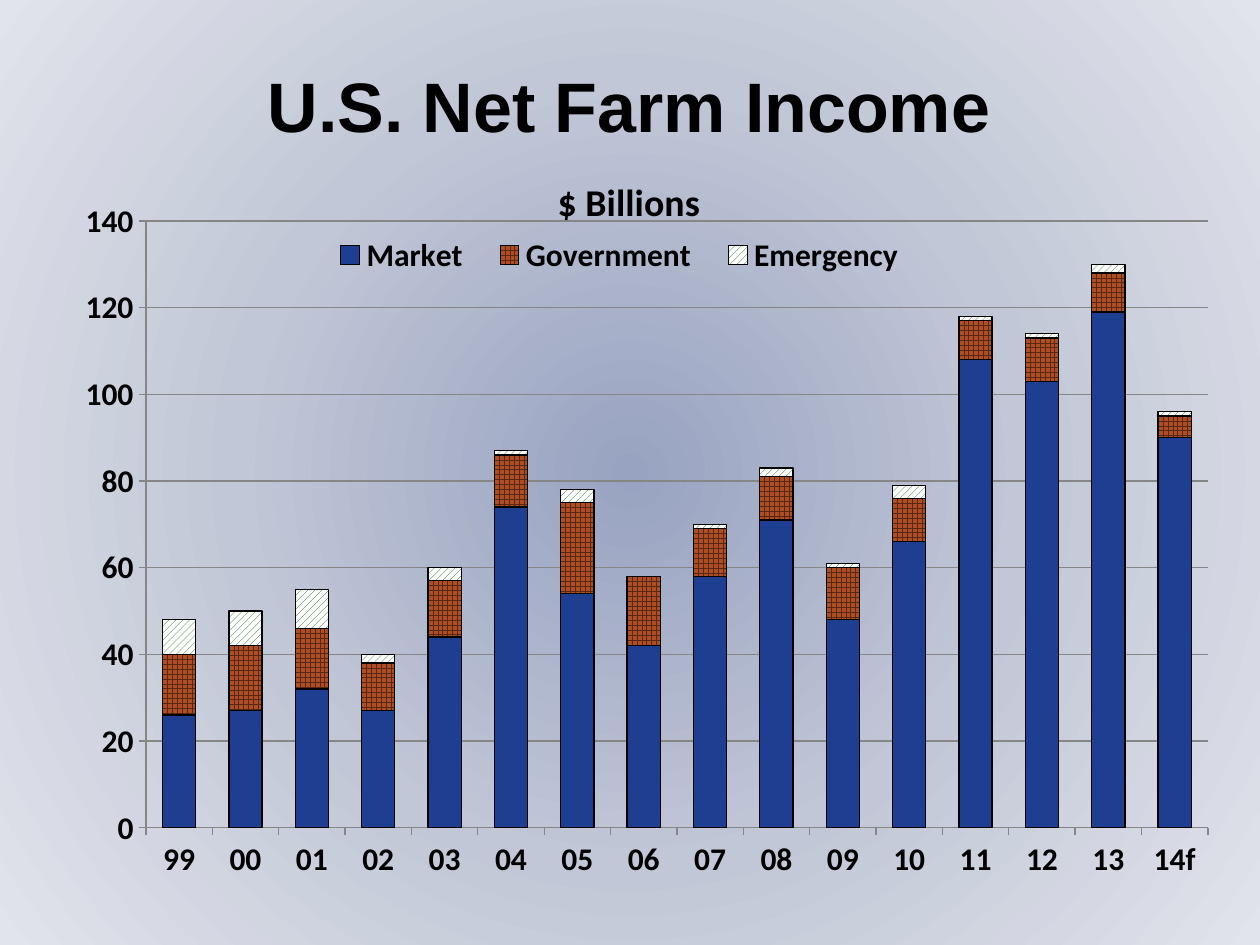
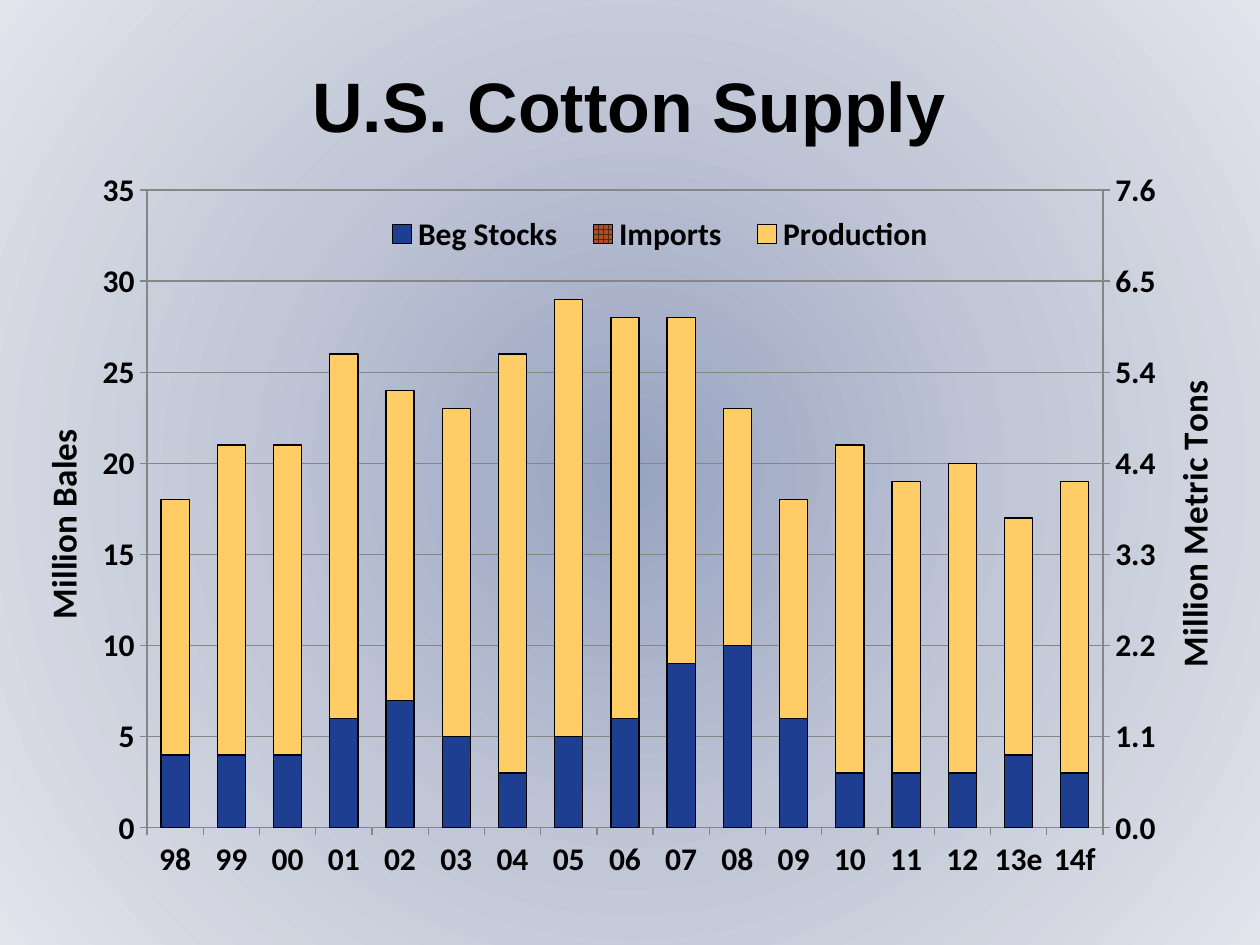
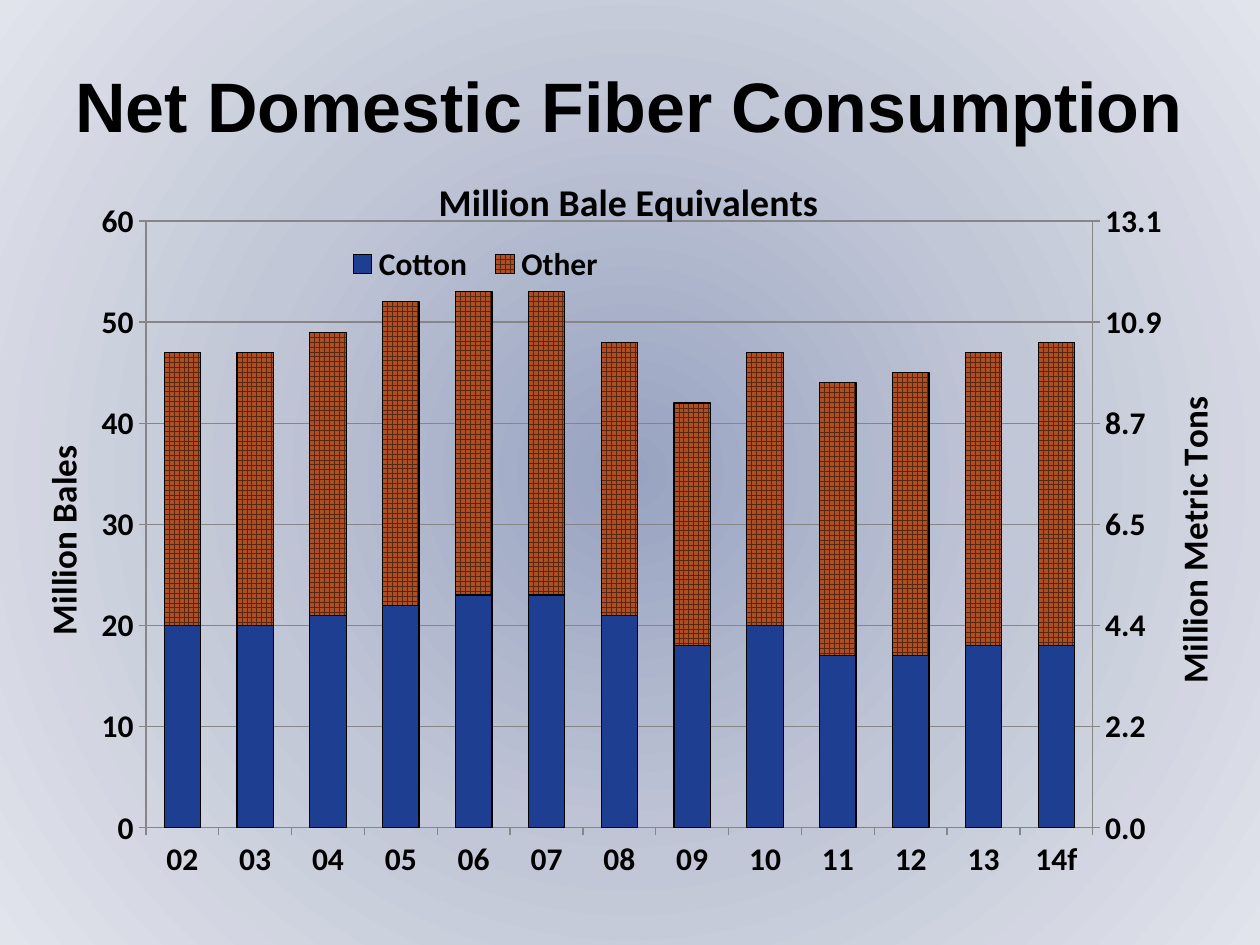
from copy import deepcopy
from pptx import Presentation
from pptx.chart.axis import CategoryAxis, ValueAxis
from pptx.chart.data import CategoryChartData
from pptx.dml.color import RGBColor
from pptx.enum.chart import (XL_CHART_TYPE, XL_LEGEND_POSITION as LegendPos,
                             XL_TICK_LABEL_POSITION as LabelPos, XL_TICK_MARK as Tick)
from pptx.enum.dml import MSO_PATTERN as Pattern
from pptx.enum.text import MSO_ANCHOR, MSO_AUTO_SIZE, PP_ALIGN
from pptx.oxml import parse_xml
from pptx.oxml.ns import nsdecls, qn
from pptx.util import Pt

PX = 914400 // 126
BALES_PER_TON = 4.59


class Theme:
    title_font, chart_font = "Arial", "Calibri"
    title_size, chart_title_size, axis_title_size, chart_size = 40, 21.6, 20, 18
    text, grid = "000000", "868686"
    background = [(0, "98A3C1"), (50, "C2C7D7"), (100, "E1E4EB")]
    blue, gold = "1E3E92", "FFCC66"
    rust = (Pattern.LARGE_GRID, "572711", "AE4E22")
    hatch = (Pattern.WIDE_UPWARD_DIAGONAL, "006600", "FFFFFF")


# Content: left series carry a fill, right series only carry the metric scale
TITLE_BOX = (31, 42, 1196, 126)
CHART_BOX = (32, 147, 1196, 755)
SLIDES = [
    dict(
        title="U.S. Net Farm Income", heading="$ Billions", heading_at=(551, 168),
        cats="99 00 01 02 03 04 05 06 07 08 09 10 11 12 13 14f".split(),
        left=[
            ("Market", Theme.blue,
             [26, 27, 32, 27, 44, 74, 54, 42, 58, 71, 48, 66, 108, 103, 119, 90]),
            ("Government", Theme.rust,
             [14, 15, 14, 11, 13, 12, 21, 16, 11, 10, 12, 10, 9, 10, 9, 5]),
            ("Emergency", Theme.hatch,
             [8, 8, 9, 2, 3, 1, 3, 0, 1, 2, 1, 3, 1, 1, 2, 1]),
        ],
        right=[], top=140, step=20, plot=(146, 221, 1062, 607), legend=(314, 236, 611, 36),
    ),
    dict(
        title="U.S. Cotton Supply", heading=None,
        cats="98 99 00 01 02 03 04 05 06 07 08 09 10 11 12 13e 14f".split(),
        left=[
            ("Beg Stocks", Theme.blue,
             [4, 4, 4, 6, 7, 5, 3, 5, 6, 9, 10, 6, 3, 3, 3, 4, 3]),
            ("Imports", Theme.rust, [0] * 17),
            ("Production", Theme.gold,
             [14, 17, 17, 20, 17, 18, 23, 24, 22, 19, 13, 12, 18, 16, 17, 13, 16]),
        ],
        right=[
            ("Series 4", [0.8, 0.9, 0.9, 1.3, 1.6, 1.2, 0.8, 1.2, 1.3, 2.1, 2.2, 1.4,
                          0.6, 0.6, 0.7, 0.8, 0.6]),
            ("Series 5", [0.1] + [0] * 16),
            ("Series 6", [3, 3.7, 3.7, 4.4, 3.7, 4, 5.1, 5.2, 4.7, 4.2, 2.8, 2.7,
                          3.9, 3.4, 3.8, 2.8, 3.6]),
        ],
        top=35, step=5, plot=(147, 190, 956, 638), legend=(367, 215, 586, 36),
        axis_titles=[("Million Bales", (32, 423)), ("Million Metric Tons", (1163, 374))],
    ),
    dict(
        title="Net Domestic Fiber Consumption",
        heading="Million Bale Equivalents", heading_at=(432, 168),
        cats="02 03 04 05 06 07 08 09 10 11 12 13 14f".split(),
        left=[
            ("Cotton", Theme.blue, [20, 20, 21, 22, 23, 23, 21, 18, 20, 17, 17, 18, 18]),
            ("Other", Theme.rust, [27, 27, 28, 30, 30, 30, 27, 24, 27, 27, 28, 29, 30]),
        ],
        right=[
            ("Series 3", [4.4, 4.5, 4.5, 4.9, 4.9, 4.9, 4.6, 4, 4.4, 3.8, 3.7, 3.8, 3.9]),
            ("Series 4", [5.8, 6, 6.2, 6.5, 6.5, 6.5, 5.8, 5.3, 6, 5.8, 6, 6.3, 6.6]),
        ],
        top=60, step=10, plot=(146, 221, 947, 607), legend=(335, 245, 281, 36),
        axis_titles=[("Million Bales", (32, 439)), ("Million Metric Tons", (1163, 390))],
    ),
]


def rgb(value):
    return RGBColor.from_string(value)


def style_font(font, name, size):
    font.name, font.size, font.bold = name, Pt(size), True
    font.color.rgb = rgb(Theme.text)


def set_background(master):
    master.background.fill.solid()
    bg = master.element.find(".//" + qn("p:bgPr"))
    stops = "".join(f'<a:gs pos="{pos * 1000}"><a:srgbClr val="{color}"/></a:gs>'
                    for pos, color in Theme.background)
    bg.replace(bg[0], parse_xml(
        f'<a:gradFill {nsdecls("a")} rotWithShape="1"><a:gsLst>{stops}</a:gsLst>'
        '<a:path path="circle"><a:fillToRect l="50000" t="50000" r="50000" b="50000"/>'
        '</a:path></a:gradFill>'))


def add_title(slide, text):
    s = slide.shapes.title
    s.left, s.top, s.width, s.height = (v * PX for v in TITLE_BOX)
    tf = s.text_frame
    tf.text = text
    tf.word_wrap, tf.auto_size = True, MSO_AUTO_SIZE.NONE
    tf.vertical_anchor = MSO_ANCHOR.MIDDLE
    p = tf.paragraphs[0]
    p.alignment = PP_ALIGN.CENTER
    style_font(p.runs[0].font, Theme.title_font, Theme.title_size)


def place(el, box, inner=False):
    """Give a chart part a fixed place, from slide px to shares of the chart."""
    left, top, width, height = CHART_BOX
    shares = [(box[0] - left) / width, (box[1] - top) / height]
    shares += [v / full for v, full in zip(box[2:], (width, height))]
    target = '<c:layoutTarget val="inner"/>' if inner else ""
    modes = '<c:xMode val="edge"/><c:yMode val="edge"/>'
    values = "".join(f'<c:{k} val="{v:.4f}"/>' for k, v in zip("xywh", shares))
    layout = parse_xml(f'<c:layout {nsdecls("c")}><c:manualLayout>{target}{modes}{values}'
                       '</c:manualLayout></c:layout>')
    for old in el.findall(qn("c:layout")):
        el.remove(old)
    overlay = el.find(qn("c:overlay"))
    if overlay is None:
        el.insert(0, layout)
    else:
        overlay.addprevious(layout)


def set_chart_text(title, text, size, at):
    tf = title.text_frame
    tf.text = text
    style_font(tf.paragraphs[0].runs[0].font, Theme.chart_font, size)
    place(title.element, at)


def style_line(axis):
    axis.major_tick_mark, axis.minor_tick_mark = Tick.OUTSIDE, Tick.NONE
    line = axis.format.line
    line.color.rgb, line.width = rgb(Theme.grid), Pt(0.75)


def style_value_axis(axis, top, step, number_format, title=None):
    axis.minimum_scale, axis.maximum_scale, axis.major_unit = 0, top, step
    labels = axis.tick_labels
    labels.number_format, labels.number_format_is_linked = number_format, False
    style_line(axis)
    if title:
        axis.has_title = True
        text, at = title
        set_chart_text(axis.axis_title, text, Theme.axis_title_size, at)
        body = axis.axis_title.element.find(".//" + qn("a:bodyPr"))
        body.set("rot", "-5400000")
        body.set("vert", "horz")


def add_right_axis(plot_area, left_count):
    """Move the series after left_count to a second bar group and return its axis."""
    bar, cat, val = (plot_area.find(qn(tag)) for tag in ("c:barChart", "c:catAx", "c:valAx"))
    bar2, cat2, val2 = (deepcopy(el) for el in (bar, cat, val))
    for el in (bar2, cat2, val2):
        for node in el.iter(qn("c:axId"), qn("c:crossAx")):
            node.set("val", str(int(node.get("val")) + 1))
    for ser in bar.findall(qn("c:ser"))[left_count:]:
        bar.remove(ser)
    for ser in bar2.findall(qn("c:ser"))[:left_count]:
        bar2.remove(ser)
    bar.addnext(bar2)
    val.addnext(val2)
    val2.addnext(cat2)
    CategoryAxis(cat2).visible = False
    val2.find(qn("c:axPos")).set("val", "r")
    val2.find(qn("c:crosses")).set("val", "max")
    axis = ValueAxis(val2)
    axis.has_major_gridlines = False
    return axis


def fill_series(series, fill):
    f = series.format.fill
    if isinstance(fill, tuple):
        f.patterned()
        f.pattern, f.fore_color.rgb, f.back_color.rgb = fill[0], rgb(fill[1]), rgb(fill[2])
    else:
        f.solid()
        f.fore_color.rgb = rgb(fill)
    series.format.line.color.rgb = rgb(Theme.text)
    series.format.line.width = Pt(0.75)
    series.invert_if_negative = False


def add_legend(chart, box, shown, total):
    chart.has_legend = True
    chart.legend.position = LegendPos.TOP
    chart.legend.include_in_layout = False
    el = chart.element.find(".//" + qn("c:legend"))
    place(el, box)
    for i in range(shown, total):
        el.find(qn("c:layout")).addprevious(parse_xml(
            f'<c:legendEntry {nsdecls("c")}><c:idx val="{i}"/><c:delete val="1"/>'
            '</c:legendEntry>'))


def add_stacked_chart(slide, c):
    left, right = c["left"], c["right"]
    data = CategoryChartData()
    data.categories = c["cats"]
    for name, _, values in left:
        data.add_series(name, values)
    for name, values in right:
        data.add_series(name, values)
    chart = slide.shapes.add_chart(XL_CHART_TYPE.COLUMN_STACKED,
                                   *(v * PX for v in CHART_BOX), data).chart
    style_font(chart.font, Theme.chart_font, Theme.chart_size)
    plot = chart.plots[0]
    plot.gap_width, plot.overlap, plot.vary_by_categories = 100, 100, False
    plot_area = chart.element.find(".//" + qn("c:plotArea"))
    place(plot_area, c["plot"], inner=True)

    # Axes
    titles = c.get("axis_titles", [None, None])
    left_axis = chart.value_axis
    if right:
        right_axis = add_right_axis(plot_area, len(left))
        style_value_axis(right_axis, c["top"] / BALES_PER_TON, c["step"] / BALES_PER_TON,
                         "#,##0.0", titles[1])
        for series in chart.plots[1].series:
            series.format.fill.background()
            series.format.line.fill.background()
    style_value_axis(left_axis, c["top"], c["step"], "0", titles[0])
    grid = left_axis.major_gridlines.format.line
    grid.color.rgb, grid.width = rgb(Theme.grid), Pt(0.75)
    chart.category_axis.tick_label_position = LabelPos.LOW
    style_line(chart.category_axis)

    # Series, heading and legend
    for series, (_, fill, _) in zip(chart.plots[0].series, left):
        fill_series(series, fill)
    chart.has_title = bool(c["heading"])
    if c["heading"]:
        set_chart_text(chart.chart_title, c["heading"], Theme.chart_title_size, c["heading_at"])
    add_legend(chart, c["legend"], len(left), len(left) + len(right))


def main():
    prs = Presentation()
    prs.slide_width, prs.slide_height = 1260 * PX, 945 * PX
    set_background(prs.slide_master)
    for content in SLIDES:
        slide = prs.slides.add_slide(prs.slide_layouts[5])
        add_title(slide, content["title"])
        add_stacked_chart(slide, content)
    prs.save("out.pptx")


if __name__ == "__main__":
    main()
